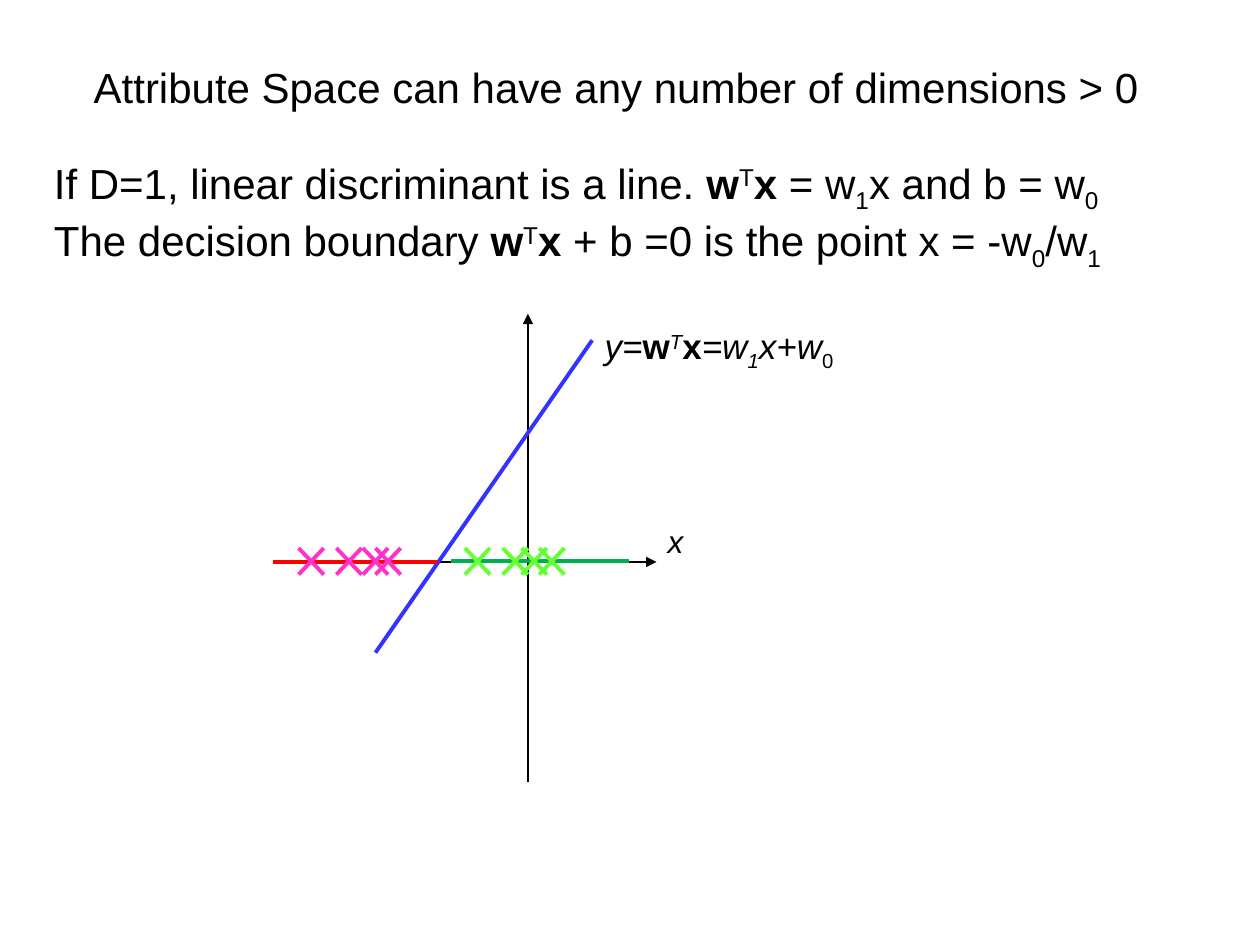
from lxml import etree
from pptx import Presentation
from pptx.dml.color import RGBColor
from pptx.enum.shapes import MSO_CONNECTOR
from pptx.enum.text import MSO_ANCHOR, PP_ALIGN
from pptx.oxml.ns import qn
from pptx.util import Inches, Pt

BLACK = RGBColor(0x00, 0x00, 0x00)
BLUE = RGBColor(0x33, 0x33, 0xFF)
GREEN = RGBColor(0x00, 0xB0, 0x50)
RED = RGBColor(0xFF, 0x00, 0x00)
LIME = RGBColor(0x66, 0xFF, 0x33)
PINK = RGBColor(0xFF, 0x33, 0xCC)

BASELINES = {"^": "30000", "_": "-25000"}


def add_runs(p, runs, size):
    """Add (text, style) runs; style letters: b bold, i italic, ^ super, _ sub."""
    for text, style in runs:
        r = p.add_run()
        r.text = text
        r.font.name = "Arial"
        r.font.size = Pt(size)
        r.font.color.rgb = BLACK
        r.font.bold = "b" in style
        r.font.italic = "i" in style
        for mark, offset in BASELINES.items():
            if mark in style:
                r.font._element.set("baseline", offset)


def add_line(x1, y1, x2, y2, color, width=2.25, arrow=False):
    line = s.shapes.add_connector(
        MSO_CONNECTOR.STRAIGHT, Inches(x1), Inches(y1), Inches(x2), Inches(y2))
    line.line.color.rgb = color
    line.line.width = Pt(width)
    if arrow:
        etree.SubElement(line.line._get_or_add_ln(), qn("a:tailEnd"), type="triangle")
    etree.SubElement(line._element.spPr, qn("a:effectLst"))


prs = Presentation()
prs.slide_width, prs.slide_height = Inches(10), Inches(7.5)
s = prs.slides.add_slide(prs.slide_layouts[5])

# Title
title = s.shapes.title
title.left, title.top = Inches(0.6), Inches(0.44)
title.width, title.height = Inches(8.58), Inches(0.5)
tf = title.text_frame
tf.word_wrap = False
tf.vertical_anchor = MSO_ANCHOR.TOP
p = tf.paragraphs[0]
p.alignment = PP_ALIGN.CENTER
add_runs(p, [("Attribute Space can have any number of dimensions > 0", "")], 24)

# Explanation
tf = s.shapes.add_textbox(Inches(0.33), Inches(1.2), Inches(9.04), Inches(0.91)).text_frame
tf.word_wrap = True
wtx = [("w", "b"), ("T", "^"), ("x", "b")]
add_runs(tf.paragraphs[0],
         [("If D=1, linear discriminant is a line. ", "")] + wtx
         + [(" = w", ""), ("1", "_"), ("x and b = w", ""), ("0", "_")], 24)
add_runs(tf.add_paragraph(),
         [("The decision boundary ", "")] + wtx
         + [(" + b =0 is the point x = -w", ""), ("0", "_"), ("/w", ""), ("1", "_")], 24)

# Axes, discriminant and the two class regions
AXIS_Y = 4.46
add_line(3.18, AXIS_Y, 5.21, AXIS_Y, BLACK, 0.75, arrow=True)
add_line(4.19, 6.21, 4.19, 2.49, BLACK, 0.75, arrow=True)
add_line(2.98, 5.18, 4.7, 2.7, BLUE)
add_line(3.58, 4.45, 4.99, 4.45, GREEN)
add_line(2.17, AXIS_Y, 3.48, AXIS_Y, RED)

# Data points drawn as crosses
CROSS = 0.2
top, bottom = 4.35, 4.56
for color, lefts in ((LIME, (4.28, 3.69, 3.99, 4.14)), (PINK, (2.98, 2.37, 2.67, 2.88))):
    for left in lefts:
        add_line(left, top, left + CROSS, bottom, color)
        add_line(left + CROSS, top, left, bottom, color)

# Labels
labels = [
    (5.2, 4.09, 0.38, 0.56, 18, [("x", "i")]),
    (4.7, 2.53, 2.07, 0.44, 20,
     [("y=", "i"), ("w", "b"), ("T", "i^"), ("x", "b"), ("=w", "i"),
      ("1", "i_"), ("x+w", "i"), ("0", "_")]),
]
for left, top, width, height, size, runs in labels:
    tf = s.shapes.add_textbox(
        Inches(left), Inches(top), Inches(width), Inches(height)).text_frame
    tf.word_wrap = False
    add_runs(tf.paragraphs[0], runs, size)

prs.save("out.pptx")
